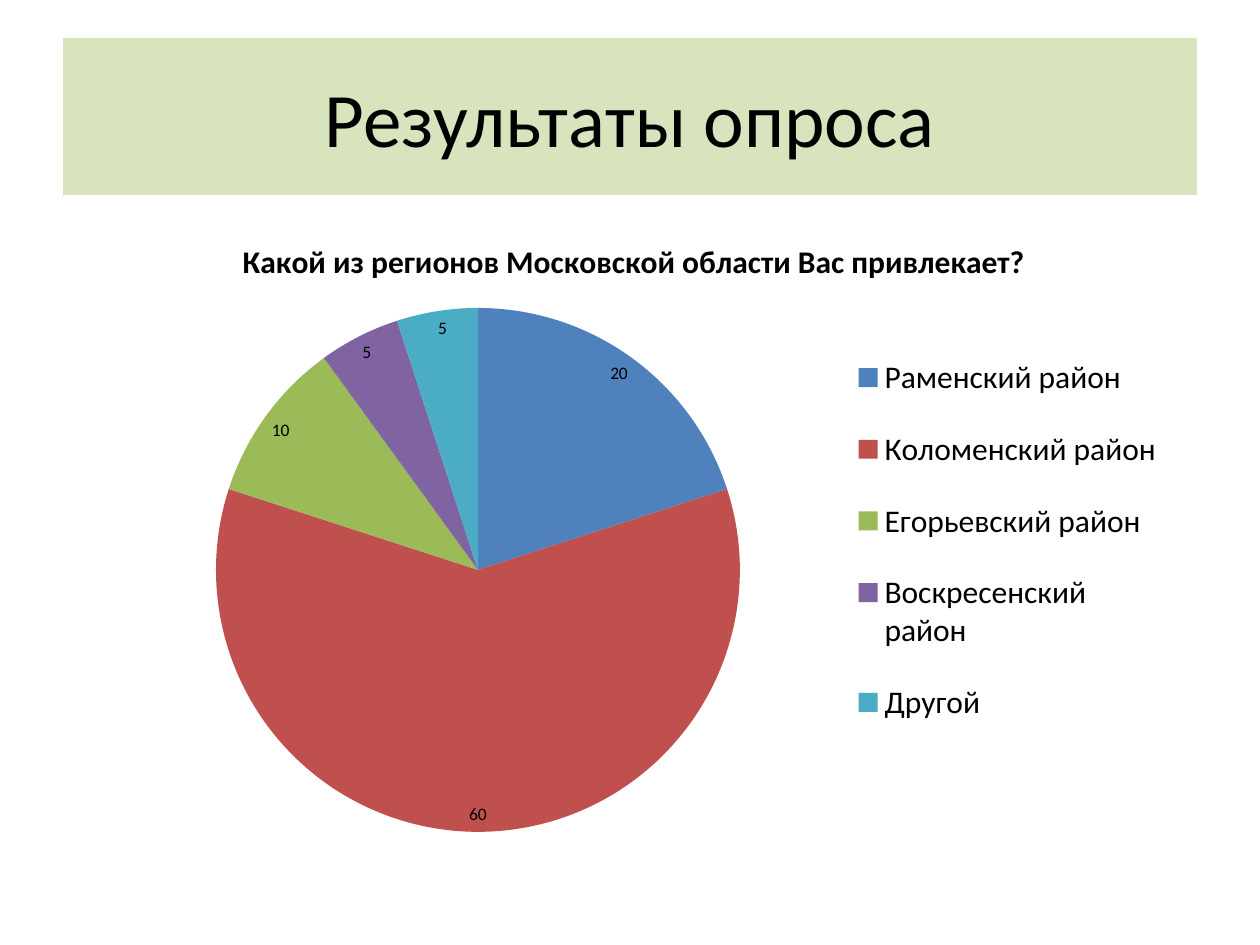
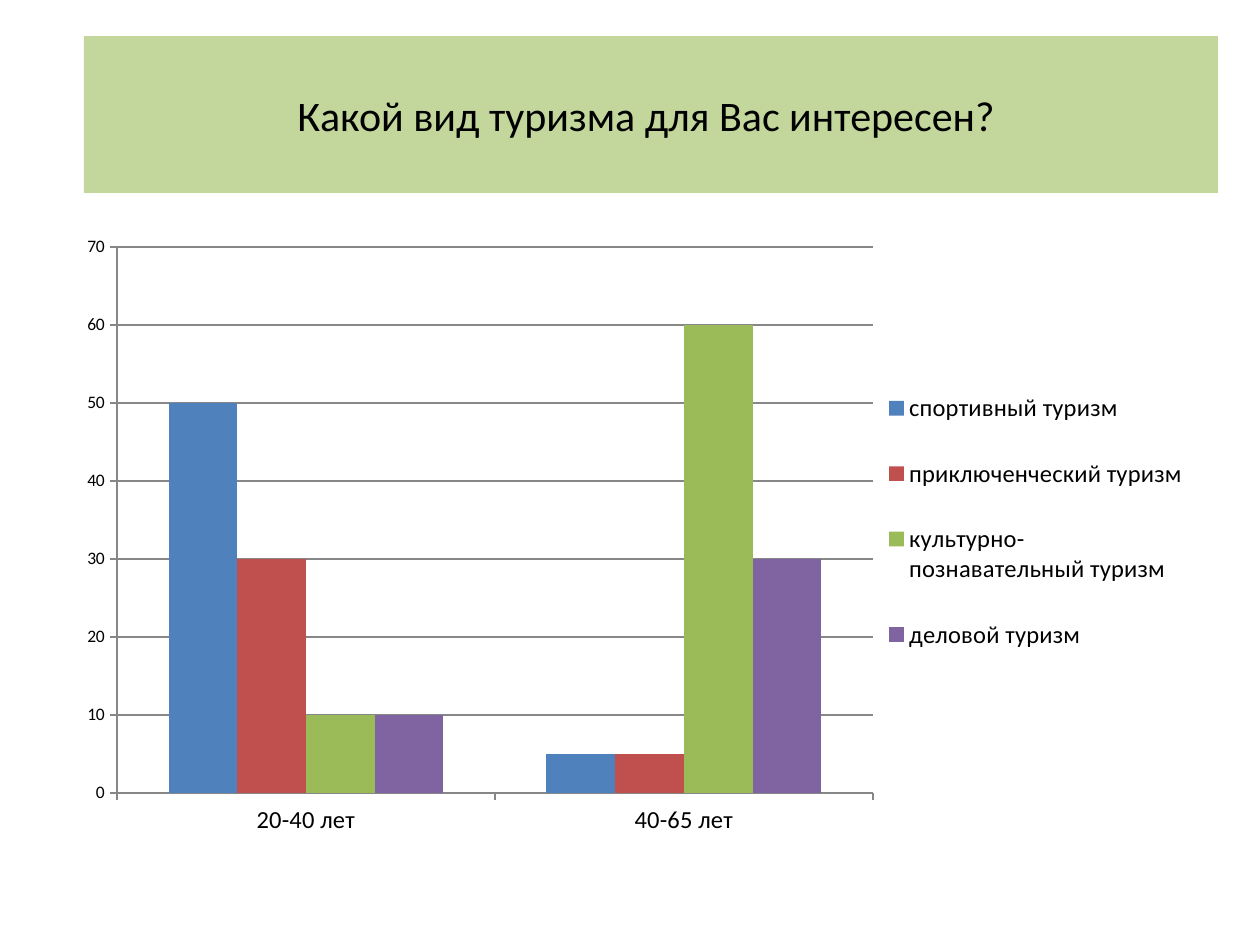
from lxml import etree
from pptx import Presentation
from pptx.chart.data import CategoryChartData
from pptx.dml.color import RGBColor
from pptx.enum.chart import XL_CHART_TYPE, XL_LABEL_POSITION, XL_LEGEND_POSITION, XL_TICK_MARK
from pptx.enum.text import MSO_ANCHOR, PP_ALIGN
from pptx.oxml.ns import qn
from pptx.util import Pt

PIE, COLUMN = XL_CHART_TYPE.PIE, XL_CHART_TYPE.COLUMN_CLUSTERED
INSIDE_END = XL_LABEL_POSITION.INSIDE_END
RIGHT = XL_LEGEND_POSITION.RIGHT
OUTSIDE = XL_TICK_MARK.OUTSIDE
CENTER, MIDDLE = PP_ALIGN.CENTER, MSO_ANCHOR.MIDDLE

FONT = "Calibri"
SCALE = 914400 / 126
COLORS = {
    "text": "000000", "axis": "878787",
    "pale_green": "D7E4BD", "green": "C3D69B",
}
SERIES_COLORS = ["4F81BD", "C0504D", "9BBB59", "8064A2", "4BACC6"]
QUESTION = "Какой из регионов Московской области Вас привлекает?"

SLIDES = [
    {
        "title": "Результаты опроса", "size": 44, "band": "pale_green",
        "title_box": (63, 38, 1134, 157), "chart_box": (94, 214, 1080, 635),
        "plot_box": (216, 308, 524, 524), "legend_box": (855, 325, 305, 430),
        "type": PIE, "legend_size": 18,
        "categories": ["Раменский район", "Коломенский район", "Егорьевский район",
                       "Воскресенский район", "Другой"],
        "series": {QUESTION: [20, 60, 10, 5, 5]},
    },
    {
        "title": "Какой вид туризма для Вас интересен? ", "size": 24, "band": "green",
        "title_box": (84, 36, 1134, 157), "chart_box": (64, 224, 1134, 624),
        "plot_box": (117, 247, 756, 546), "legend_box": (896, 358, 297, 327),
        "type": COLUMN, "legend_size": 14,
        "categories": ["20-40 лет", "40-65 лет"],
        "series": {
            "спортивный туризм": [50, 5],
            "приключенческий туризм": [30, 5],
            "культурно-познавательный туризм": [10, 60],
            "деловой туризм": [10, 30],
        },
    },
]


def px(*lengths):
    return [round(length * SCALE) for length in lengths]


def format_font(font, size, bold=False):
    for name, value in {"name": FONT, "size": Pt(size), "bold": bold}.items():
        setattr(font, name, value)
    font.color.rgb = RGBColor.from_string(COLORS["text"])


presentation = Presentation()
presentation.slide_width, presentation.slide_height = px(1260, 945)

for content in SLIDES:
    slide = presentation.slides.add_slide(presentation.slide_layouts[5])
    title = slide.shapes.title
    title.left, title.top, title.width, title.height = px(*content["title_box"])
    title.fill.solid()
    title.fill.fore_color.rgb = RGBColor.from_string(COLORS[content["band"]])
    title.text_frame.text = content["title"]
    title.text_frame.vertical_anchor = MIDDLE
    paragraph = title.text_frame.paragraphs[0]
    paragraph.alignment = CENTER
    format_font(paragraph.runs[0].font, content["size"])

    data = CategoryChartData()
    data.categories = content["categories"]
    for name, values in content["series"].items():
        data.add_series(name, values)
    chart = slide.shapes.add_chart(content["type"], *px(*content["chart_box"]), data).chart
    format_font(chart.font, 10)
    chart.has_legend = True
    chart.legend.position = RIGHT
    chart.legend.include_in_layout = False
    format_font(chart.legend.font, content["legend_size"])
    plot = chart.plots[0]

    if content["type"] == PIE:
        chart.has_title = True
        chart.chart_title.text_frame.text = QUESTION
        format_font(chart.chart_title.text_frame.paragraphs[0].runs[0].font, 18, True)
        plot.vary_by_categories = True
        plot.has_data_labels = True
        plot.data_labels.show_value = True
        plot.data_labels.show_percentage = False
        plot.data_labels.position = INSIDE_END
        format_font(plot.data_labels.font, 10)
        parts = [plot.series[0].points[index] for index in range(len(content["categories"]))]
    else:
        chart.has_title = False
        plot.vary_by_categories = False
        plot.gap_width = 150
        chart.value_axis.has_major_gridlines = True
        lines = [chart.value_axis.major_gridlines.format.line]
        for axis, size in ((chart.category_axis, 14), (chart.value_axis, 10)):
            format_font(axis.tick_labels.font, size)
            axis.major_tick_mark = OUTSIDE
            lines.append(axis.format.line)
        for line in lines:
            line.color.rgb = RGBColor.from_string(COLORS["axis"])
            line.width = Pt(0.75)
        parts = list(plot.series)

    for part, color in zip(parts, SERIES_COLORS):
        part.format.fill.solid()
        part.format.fill.fore_color.rgb = RGBColor.from_string(color)

    chart_element = chart._chartSpace.chart
    left, top, width, height = content["chart_box"]
    for parent, index, box, target in (
        (chart_element.plotArea, 0, "plot_box", {"layoutTarget": "inner"}),
        (chart_element.find(qn("c:legend")), 1, "legend_box", {}),
    ):
        for old_layout in parent.findall(qn("c:layout")):
            parent.remove(old_layout)
        layout = etree.Element(qn("c:layout"))
        parent.insert(index, layout)
        manual = etree.SubElement(layout, qn("c:manualLayout"))
        box_left, box_top, box_width, box_height = content[box]
        settings = {
            **target, "xMode": "edge", "yMode": "edge",
            "x": (box_left - left) / width, "y": (box_top - top) / height,
            "w": box_width / width, "h": box_height / height,
        }
        for tag, value in settings.items():
            etree.SubElement(manual, qn(f"c:{tag}")).set("val", str(value))

presentation.save("out.pptx")
